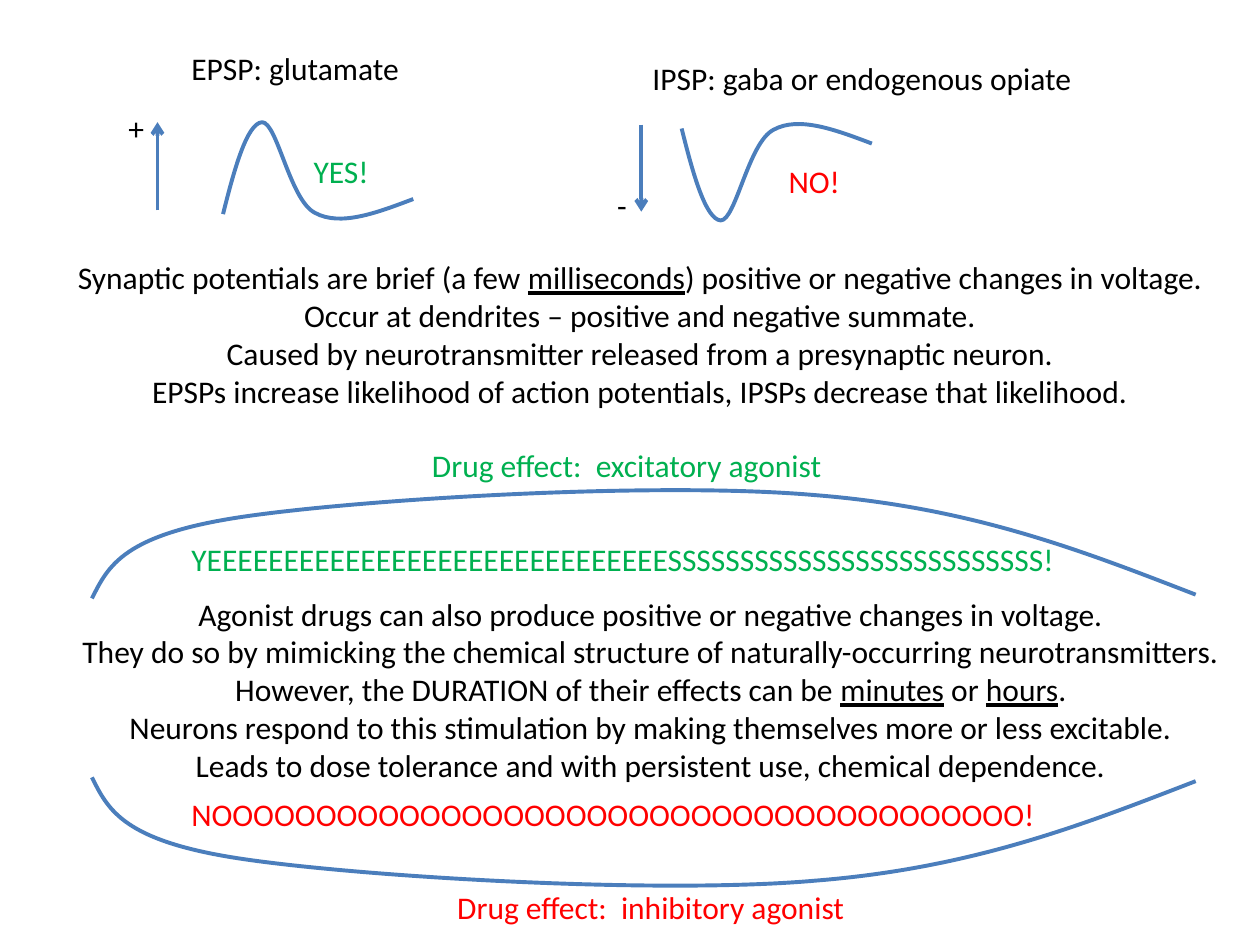
import dataclasses
import typing

import lxml.etree
import pptx
import pptx.dml.color
import pptx.enum.text
import pptx.oxml.ns
import pptx.util

COLUMNS, ROWS = 100, 75
CELL = pptx.util.Inches(0.1)
Point = tuple[float, float]


@dataclasses.dataclass(frozen=True)
class Theme:
    font: str = "Calibri"
    size: float = 18
    line_width: float = 2.25
    ink: str = "000000"
    line: str = "4B7EBC"
    excite: str = "00B050"
    inhibit: str = "FF0000"


@dataclasses.dataclass(frozen=True)
class Span:
    text: str
    underline: bool = False


@dataclasses.dataclass(frozen=True)
class Label:
    """A single line of text, placed by column and row."""
    text: str
    left: float
    top: float
    width: float
    color: str


@dataclasses.dataclass(frozen=True)
class Wave:
    """A chain of cubic curves; points are cells from the top left of its box."""
    width: float
    height: float
    points: tuple[Point, ...]


THEME = Theme()
LABEL_HEIGHT = 4

POTENTIAL = Wave(15.1, 7.6, (
    (0, 7.3), (0.9, 3.7), (1.9, 0.1), (3.1, 0), (4.3, 0),
    (5.3, 6.2), (7.3, 7.2), (9.3, 8.3), (12.2, 7.2), (15.1, 6.1)))
DRUG_EFFECT = Wave(87.6, 8.6, (
    (0, 8.6), (1.3, 6), (2.5, 3.5), (12.1, 2.1), (21.7, 0.7),
    (44.9, -0.7), (57.4, 0.4), (70, 1.4), (78.8, 4.9), (87.6, 8.3)))

POTENTIAL_LABELS = (
    Label("EPSP: glutamate", 14.2, 3.4, 18.7, THEME.ink),
    Label("IPSP: gaba or endogenous opiate", 50.8, 4.2, 35.7, THEME.ink),
    Label("+", 9.2, 8.2, 3.3, THEME.ink),
    Label("-", 48, 14.3, 2.8, THEME.ink),
    Label("YES!", 23.9, 11.6, 6.4, THEME.excite),
    Label("NO!", 61.6, 12.4, 6.1, THEME.inhibit),
)
DRUG_LABELS = (
    Label("Drug effect:  excitatory agonist", 33.3, 34.9, 33.4, THEME.excite),
    Label("Drug effect:  inhibitory agonist", 35.3, 70, 33.2, THEME.inhibit),
    Label("Y" + "E" * 30 + "S" * 26 + "!", 14.2, 42.4, 70.9, THEME.excite),
    Label("N" + "O" * 39 + "!", 14.2, 62.6, 69.4, THEME.inhibit),
)

SYNAPTIC_LINES = (
    (Span("Synaptic potentials are brief (a few "), Span("milliseconds", True),
     Span(") positive or negative changes in voltage.")),
    (Span("Occur at dendrites – positive and negative summate."),),
    (Span("Caused by neurotransmitter released from a presynaptic neuron."),),
    (Span("EPSPs increase likelihood of action potentials, "
          "IPSPs decrease that likelihood."),),
)
AGONIST_LINES = (
    (Span("Agonist drugs can also produce positive or negative changes in voltage."),),
    (Span("They do so by mimicking the chemical structure of "
          "naturally-occurring neurotransmitters."),),
    (Span("However, the DURATION of their effects can be "), Span("minutes", True),
     Span(" or "), Span("hours", True), Span(".")),
    (Span("Neurons respond to this stimulation by making themselves "
          "more or less excitable."),),
    (Span("Leads to dose tolerance and with persistent use, chemical dependence."),),
)


def cells(count: float) -> int:
    return round(count * CELL)


def rgb(color: str) -> pptx.dml.color.RGBColor:
    return pptx.dml.color.RGBColor.from_string(color)


def style_line(line: typing.Any) -> None:
    line.color.rgb = rgb(THEME.line)
    line.width = pptx.util.Pt(THEME.line_width)


def draw_text(shapes: typing.Any, lines: tuple[tuple[Span, ...], ...],
              left: float, top: float, width: float, height: float,
              color: str = THEME.ink, centered: bool = True) -> None:
    box = shapes.add_textbox(*map(cells, (left, top, width, height)))
    frame = box.text_frame
    frame.word_wrap = False
    frame.auto_size = pptx.enum.text.MSO_AUTO_SIZE.SHAPE_TO_FIT_TEXT
    align = pptx.enum.text.PP_ALIGN
    for index, spans in enumerate(lines):
        para = frame.add_paragraph() if index else frame.paragraphs[0]
        para.alignment = align.CENTER if centered else align.LEFT
        for span in spans:
            run = para.add_run()
            run.text = span.text
            run.font.name = THEME.font
            run.font.size = pptx.util.Pt(THEME.size)
            run.font.color.rgb = rgb(color)
            if span.underline:
                run.font.underline = True


def draw_labels(shapes: typing.Any, labels: tuple[Label, ...]) -> None:
    for label in labels:
        draw_text(shapes, ((Span(label.text),),), label.left, label.top,
                  label.width, LABEL_HEIGHT, label.color, centered=False)


def draw_wave(shapes: typing.Any, wave: Wave, left: float, top: float,
              flipped: bool = False) -> None:
    """Build an open outline, then turn each three segments into one cubic curve."""
    points = [(cells(x), cells(wave.height - y if flipped else y))
              for x, y in wave.points]
    builder = shapes.build_freeform(*points[0])
    builder.add_line_segments(points[1:], close=False)
    curve = builder.convert_to_shape()
    curve.left, curve.top = cells(left), cells(top)
    curve.width, curve.height = cells(wave.width), cells(wave.height)
    curve.shadow.inherit = False
    curve.fill.background()
    style_line(curve.line)

    qn = pptx.oxml.ns.qn
    outline = next(curve.element.iter(qn("a:path")))
    outline.set("w", str(curve.width))
    outline.set("h", str(curve.height))
    for child in list(outline):
        outline.remove(child)
    for index, (x, y) in enumerate(points):
        if index == 0:
            segment = lxml.etree.SubElement(outline, qn("a:moveTo"))
        elif index % 3 == 1:
            segment = lxml.etree.SubElement(outline, qn("a:cubicBezTo"))
        lxml.etree.SubElement(segment, qn("a:pt"), x=str(x), y=str(y))


def draw_arrow(shapes: typing.Any, column: float, start: float, end: float) -> None:
    arrow = shapes.add_connector(
        pptx.enum.shapes.MSO_CONNECTOR.STRAIGHT,
        cells(column), cells(start), cells(column), cells(end))
    style_line(arrow.line)
    qn = pptx.oxml.ns.qn
    properties = arrow.element.spPr
    lxml.etree.SubElement(properties.find(qn("a:ln")), qn("a:tailEnd"), type="arrow")
    lxml.etree.SubElement(properties, qn("a:effectLst"))


def main() -> None:
    deck = pptx.Presentation()
    deck.slide_width, deck.slide_height = cells(COLUMNS), cells(ROWS)
    slide = deck.slides.add_slide(deck.slide_layouts[6])

    draw_wave(slide.shapes, POTENTIAL, 17.7, 9.7)
    draw_wave(slide.shapes, POTENTIAL, 54.1, 9.9, flipped=True)
    draw_arrow(slide.shapes, 12.5, 16.7, 9.7)
    draw_arrow(slide.shapes, 50.9, 9.9, 16.8)
    draw_labels(slide.shapes, POTENTIAL_LABELS)
    draw_text(slide.shapes, SYNAPTIC_LINES, 4.6, 20, 92.4, 13.1)

    drug_group = slide.shapes.add_group_shape()
    draw_wave(drug_group.shapes, DRUG_EFFECT, 7.3, 38.9)
    draw_wave(drug_group.shapes, DRUG_EFFECT, 7.3, 61.7, flipped=True)
    draw_labels(drug_group.shapes, DRUG_LABELS)
    draw_text(drug_group.shapes, AGONIST_LINES, 5, 46.7, 93.3, 16.2)

    deck.save("out.pptx")


if __name__ == "__main__":
    main()
